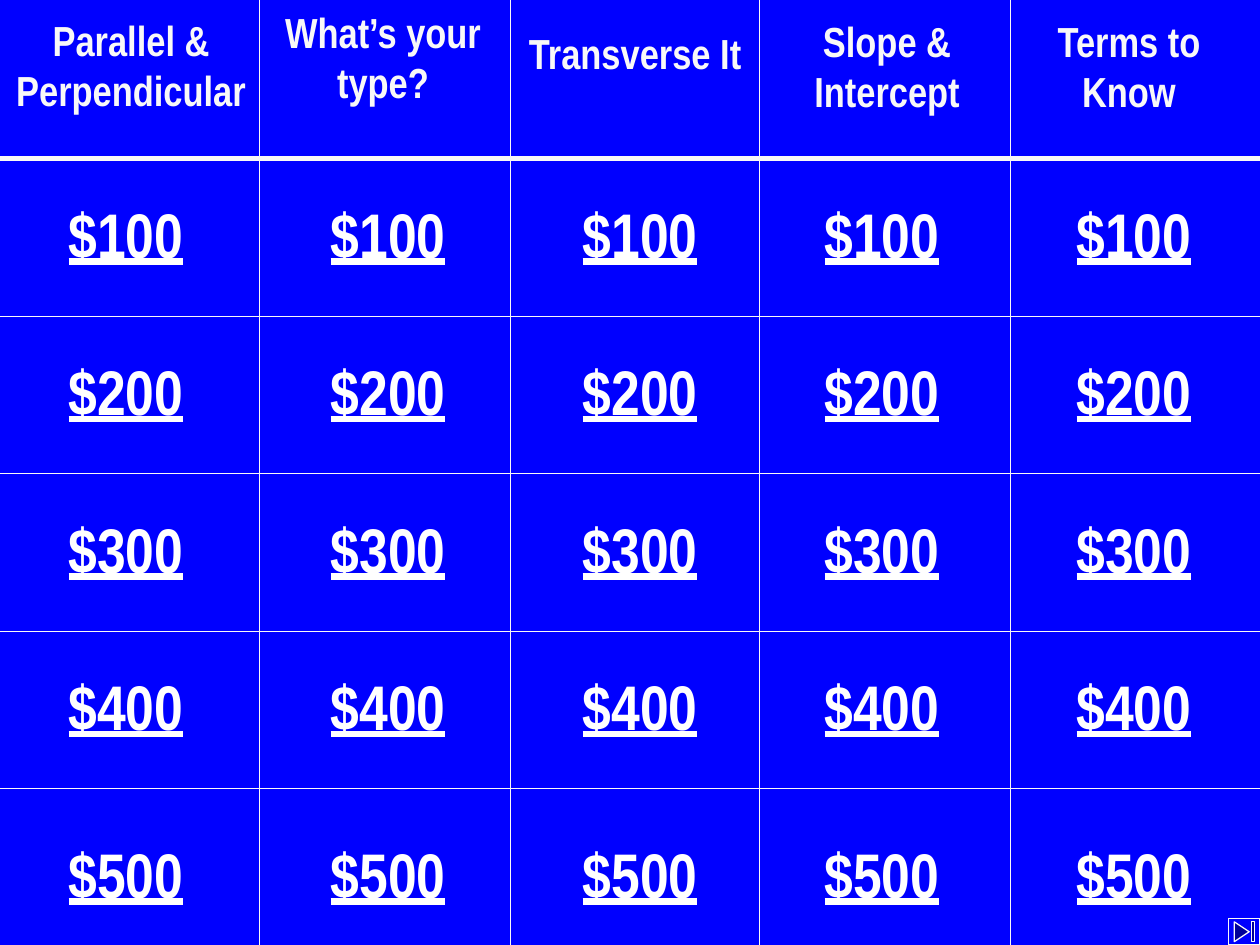
import pptx
import pptx.util
import pptx.oxml.ns
import pptx.dml.color
import pptx.enum.shapes
import pptx.enum.text
import lxml.etree

Inches = pptx.util.Inches
COLORS = {"board": "0000FF", "line": "F8F8F8", "amount": "FFFFFF"}


def rgb(name):
    return pptx.dml.color.RGBColor.from_string(COLORS[name])


def add_label(s, text, left, top, width, height, size, color, anchor, underline):
    tb = s.shapes.add_textbox(Inches(left), Inches(top), Inches(width), Inches(height))
    tf = tb.text_frame
    tf.word_wrap = True
    tf.auto_size = pptx.enum.text.MSO_AUTO_SIZE.SHAPE_TO_FIT_TEXT
    tf.vertical_anchor = anchor
    p = tf.paragraphs[0]
    p.alignment = pptx.enum.text.PP_ALIGN.CENTER
    r = p.add_run()
    r.text = text
    r.font.name = "Arial Narrow"
    r.font.size = pptx.util.Pt(size)
    r.font.bold = True
    r.font.underline = underline
    r.font.color.rgb = rgb(color)


prs = pptx.Presentation()
prs.slide_width = Inches(10)
prs.slide_height = Inches(7.5)
s = prs.slides.add_slide(prs.slide_layouts[6])
s.background.fill.solid()
s.background.fill.fore_color.rgb = rgb("board")

# Grid lines: columns, then rows, with a heavy rule under the categories
lines = [(x, 0, x, 7.5, 0.75) for x in (2.06, 4.05, 6.03, 8.02)]
for i in range(5):
    y = 1.26 + 1.25 * i
    lines.append((0, y, 10, y, 3 if i == 0 else 0.75))

grid = s.shapes.add_group_shape()
for x1, y1, x2, y2, weight in lines:
    c = grid.shapes.add_connector(pptx.enum.shapes.MSO_CONNECTOR.STRAIGHT,
                                  Inches(x1), Inches(y1), Inches(x2), Inches(y2))
    c.line.color.rgb = rgb("line")
    c.line.width = pptx.util.Pt(weight)
    lxml.etree.SubElement(c._element.spPr, pptx.oxml.ns.qn("a:effectLst"))

# Category headings
categories = [
    ("Parallel & Perpendicular", 0, 0.06, 0.91),
    ("What’s your type?", 2, 0, 0.9),
    ("Transverse It", 4, 0.17, 0.5),
    ("Slope & Intercept", 6, 0.07, 0.9),
    ("Terms to Know", 7.92, 0.07, 0.9),
]
for text, left, top, height in categories:
    add_label(s, text, left, top, 2.08, height, 24, "line",
              pptx.enum.text.MSO_ANCHOR.MIDDLE, None)

# Dollar amounts
for i, top in enumerate((1.5, 2.75, 4, 5.25, 6.58), start=1):
    for left in (0, 2.08, 4.08, 6, 8):
        add_label(s, f"${i * 100}", left, top, 2, 0.7, 36, "amount",
                  pptx.enum.text.MSO_ANCHOR.TOP, True)

# Button to the last slide
button = s.shapes.add_shape(pptx.enum.shapes.MSO_SHAPE.ACTION_BUTTON_END,
                            Inches(9.75), Inches(7.29), Inches(0.25), Inches(0.21))
button.shadow.inherit = False
button.fill.solid()
button.fill.fore_color.rgb = rgb("board")
button.line.color.rgb = rgb("line")
button.line.width = pptx.util.Pt(0.75)

prs.save("out.pptx")
